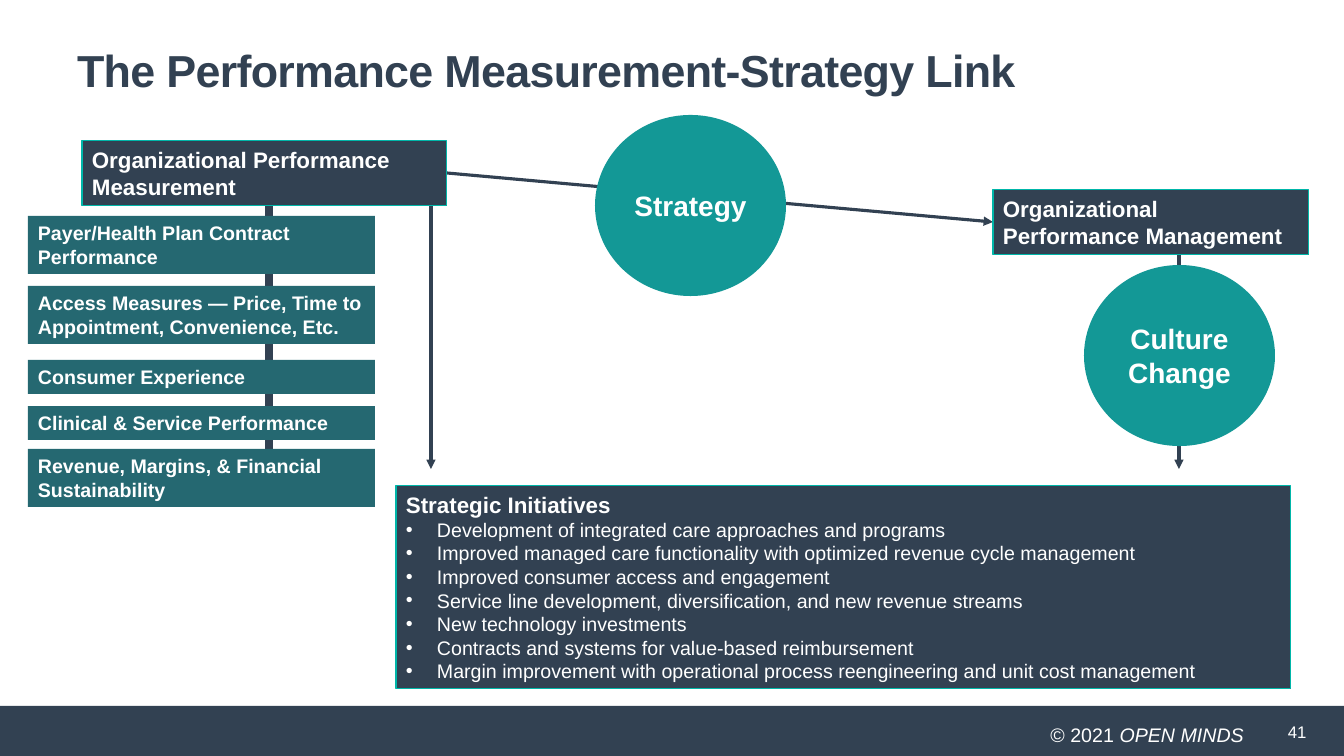
from lxml.etree import SubElement
from pptx import Presentation
from pptx.dml.color import RGBColor
from pptx.enum.shapes import MSO_CONNECTOR as Link, MSO_SHAPE as Kind
from pptx.enum.text import MSO_ANCHOR as Anchor, MSO_AUTO_SIZE as Fit, PP_ALIGN as Align
from pptx.oxml.ns import qn
from pptx.util import Emu, Pt

WIDE, HIGH = 1344, 756
SCALE = 12192000 / WIDE
NAVY, TEAL, PINE, MINT, WHITE = "324152", "139896", "256871", "00B6A9", "FFFFFF"


def px(num):
    return Emu(round(num * SCALE))


def tint(code):
    return RGBColor.from_string(code)


class Board:
    """Holds the house style and the current slide."""

    face = "Arial"

    def __init__(self, deck):
        self.slide = deck.slides.add_slide(deck.slide_layouts[5])
        self.shapes = self.slide.shapes

    def style(self, para, size, bold=False, color=WHITE, align=Align.LEFT):
        para.alignment = align
        for run in para.runs:
            font = run.font
            font.name, font.size, font.bold = self.face, Pt(size), bold
            font.color.rgb = tint(color)

    def letter(self, shape, text, size, bold=True, color=WHITE,
               align=Align.LEFT, anchor=Anchor.TOP):
        frame = shape.text_frame
        frame.text = text
        frame.word_wrap, frame.auto_size = True, Fit.NONE
        frame.vertical_anchor = anchor
        for para in frame.paragraphs:
            self.style(para, size, bold, color, align)
        return frame

    def title(self, text, x, y, w, h):
        head = self.shapes.title
        head.left, head.top, head.width, head.height = map(px, (x, y, w, h))
        frame = self.letter(head, text, 32, color=NAVY, anchor=Anchor.MIDDLE)
        for run in frame.paragraphs[0].runs:
            run._r.get_or_add_rPr().set("spc", "-50")

    def shape(self, kind, x, y, w, h, fill, edge=None):
        item = self.shapes.add_shape(kind, *map(px, (x, y, w, h)))
        item.shadow.inherit = False
        item.fill.solid()
        item.fill.fore_color.rgb = tint(fill)
        if edge:
            item.line.color.rgb = tint(edge)
            item.line.width = Pt(0.75)
        else:
            item.line.fill.background()
        return item

    def box(self, text, x, y, w, h, fill=NAVY, edge=MINT, size=16):
        return self.letter(self.shape(Kind.RECTANGLE, x, y, w, h, fill, edge), text, size)

    def disc(self, text, x, y):
        item = self.shape(Kind.OVAL, x, y, 191, 181, TEAL)
        self.letter(item, text, 20, align=Align.CENTER, anchor=Anchor.MIDDLE)

    def label(self, text, x, y, w, h, size, **look):
        item = self.shapes.add_textbox(*map(px, (x, y, w, h)))
        return self.letter(item, text, size, False, **look)

    def line(self, x1, y1, x2, y2, width=2.25, arrow=True):
        item = self.shapes.add_connector(Link.STRAIGHT, *map(px, (x1, y1, x2, y2)))
        item.line.color.rgb = tint(NAVY)
        item.line.width = Pt(width)
        if arrow:
            SubElement(item.line._get_or_add_ln(), qn("a:tailEnd"), type="triangle")
        SubElement(item._element.spPr, qn("a:effectLst"))

    def bullets(self, frame, items, size):
        for text in items:
            para = frame.add_paragraph()
            para.text = text
            props = para._p.get_or_add_pPr()
            props.set("marL", str(px(31)))
            props.set("indent", str(-px(31)))
            SubElement(props, qn("a:buFont"), typeface=self.face)
            SubElement(props, qn("a:buChar"), char="•")
            self.style(para, size)


MEASURES = [
    (216, 58, "Payer/Health Plan Contract Performance"),
    (286, 58, "Access Measures — Price, Time to Appointment, Convenience, Etc."),
    (360, 34, "Consumer Experience"),
    (406, 34, "Clinical & Service Performance"),
    (449, 58, "Revenue, Margins, & Financial Sustainability"),
]
PLANS = [
    "Development of integrated care approaches and programs",
    "Improved managed care functionality with optimized revenue cycle management",
    "Improved consumer access and engagement",
    "Service line development, diversification, and new revenue streams",
    "New technology investments",
    "Contracts and systems for value-based reimbursement",
    "Margin improvement with operational process reengineering and unit cost management",
]


def main():
    deck = Presentation()
    deck.slide_width, deck.slide_height = px(WIDE), px(HIGH)
    board = Board(deck)

    board.shape(Kind.RECTANGLE, 0, 706, WIDE, 50, NAVY)
    note = board.label("© 2021 ", 176, 718, 1078, 32, 14, align=Align.RIGHT)
    owner = note.paragraphs[0].add_run()
    owner.text = "OPEN MINDS"
    board.style(note.paragraphs[0], 14, align=Align.RIGHT)
    owner.font.italic = True
    board.label("41", 1278, 712, 60, 40, 12, anchor=Anchor.MIDDLE)
    board.title("The Performance Measurement-Strategy Link", 67, 42, 1212, 56)

    base = 469
    board.line(1179, 190, 1179, base)
    board.line(447, 173, 993, 222)
    board.line(431, 168, 431, base)
    board.line(269, 195, 269, base, width=6, arrow=False)

    frame = board.box("Strategic Initiatives", 396, 486, 895, 203)
    board.bullets(frame, PLANS, 14)
    board.disc("Strategy", 595, 115)
    board.box("Organizational Performance Management", 993, 190, 316, 65)
    board.disc("Culture Change", 1084, 265)
    for top, high, text in MEASURES:
        board.box(text, 28, top, 347, high, PINE, None, 14)
    board.box("Organizational Performance Measurement", 82, 141, 365, 65)

    deck.save("out.pptx")


if __name__ == "__main__":
    main()
